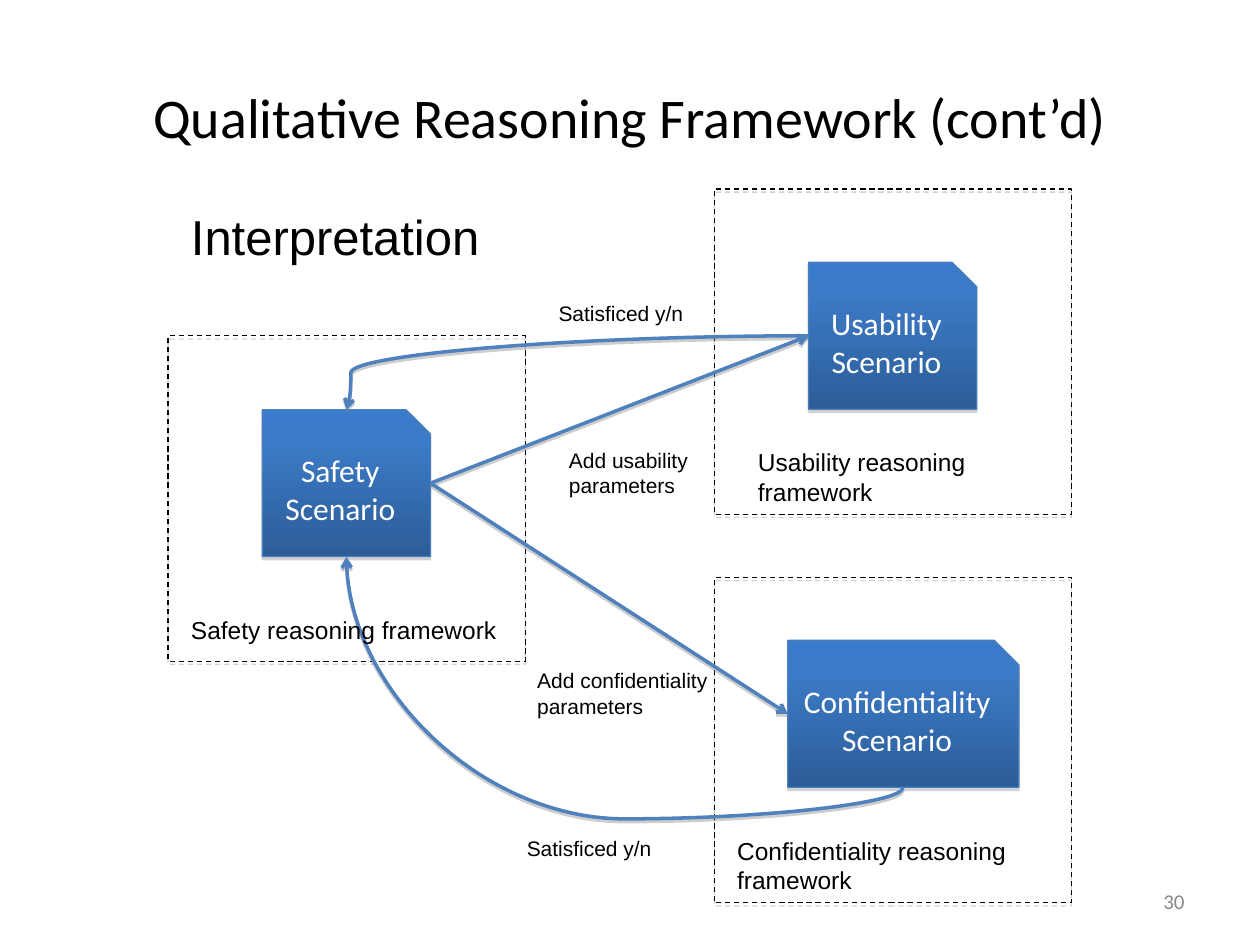
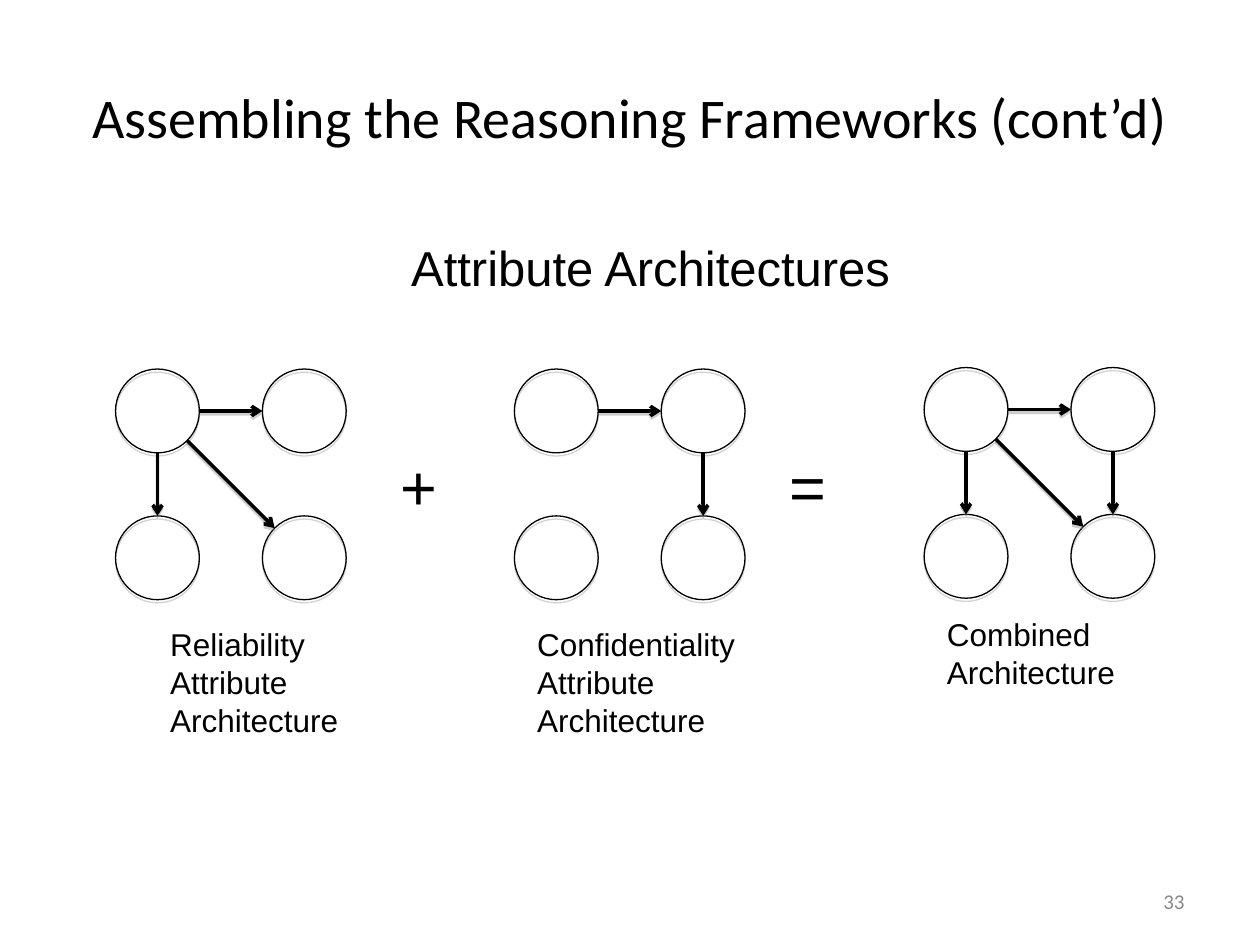
from copy import deepcopy
from dataclasses import dataclass
from math import hypot

from lxml.etree import SubElement
from pptx import Presentation
from pptx.dml.color import RGBColor
from pptx.enum.dml import MSO_LINE
from pptx.enum.shapes import MSO_CONNECTOR, MSO_SHAPE
from pptx.enum.text import MSO_ANCHOR, PP_ALIGN
from pptx.oxml.ns import qn
from pptx.util import Cm, Pt


@dataclass(frozen=True)
class Theme:
    heading_font: str = "Calibri"
    text_font: str = "Arial"
    black: str = "000000"
    white: str = "FFFFFF"
    grey: str = "898989"
    shadow: str = "808080"
    arrow: str = "4F81BD"
    box_line: str = "4A7EBB"
    gradient: tuple = ((0, "3A7CCB"), (0.2, "3C7BC7"), (1, "2C5D98"))
    title: int = 32
    subtitle: int = 28
    sign: int = 36
    box: int = 18
    frame: int = 14
    small: int = 12
    thin: float = 0.75
    thick: float = 2


T = Theme()


def write(shape, lines, size, font=T.text_font, color=T.black,
          align=PP_ALIGN.LEFT, anchor=MSO_ANCHOR.TOP):
    tf = shape.text_frame
    tf.word_wrap = True
    tf.vertical_anchor = anchor
    for i, line in enumerate(lines):
        p = tf.add_paragraph() if i else tf.paragraphs[0]
        p.alignment = align
        r = p.add_run()
        r.text = line
        r.font.size = Pt(size)
        r.font.name = font
        r.font.color.rgb = RGBColor.from_string(color)


def outline(shape, color, width, arrow=False):
    """Line, soft drop shadow and, on request, an arrowhead at the end."""
    shape.line.color.rgb = RGBColor.from_string(color)
    shape.line.width = Pt(width)
    sp_pr = shape.element.spPr
    if arrow:
        SubElement(sp_pr.find(qn("a:ln")), qn("a:tailEnd"), type="arrow")
    effects = SubElement(sp_pr, qn("a:effectLst"))
    shadow = SubElement(effects, qn("a:outerShdw"), blurRad="0",
                        dist=str(Pt(1.6 if arrow else 1.8)), dir="5400000",
                        rotWithShape="0")
    clr = SubElement(shadow, qn("a:srgbClr"), val=T.shadow)
    SubElement(clr, qn("a:alpha"), val="38000" if arrow else "35000")


prs = Presentation()
prs.slide_width, prs.slide_height = Cm(25.4), Cm(19.05)

# Titles and page numbers
slides = []
for title, number in (
    ("Qualitative Reasoning Framework (cont’d)", "30"),
    ("Assembling the Reasoning Frameworks (cont’d)", "33"),
):
    s = prs.slides.add_slide(prs.slide_layouts[5])
    sp = s.shapes.title
    sp.left, sp.top, sp.width, sp.height = Cm(1.27), Cm(0.76), Cm(22.86), Cm(3.18)
    write(sp, [title], T.title, T.heading_font, align=PP_ALIGN.CENTER,
          anchor=MSO_ANCHOR.MIDDLE)
    sp = s.shapes.add_textbox(Cm(18.21), Cm(17.65), Cm(5.92), Cm(1.02))
    write(sp, [number], T.small, T.heading_font, T.grey, PP_ALIGN.RIGHT,
          MSO_ANCHOR.MIDDLE)
    slides.append(s)

# Slide 1: dashed frameworks, each with its scenario
s = slides[0]
for name, frame_x, frame_y, box_x, box_y, box_w in (
    ("Safety", 3.39, 6.77, 5.29, 8.26, 3.39),
    ("Usability", 14.4, 3.81, 16.3, 5.29, 3.39),
    ("Confidentiality", 14.4, 11.64, 15.88, 12.91, 4.66),
):
    sp = s.shapes.add_shape(MSO_SHAPE.RECTANGLE, Cm(frame_x), Cm(frame_y),
                            Cm(7.2), Cm(6.56))
    sp.fill.background()
    outline(sp, T.black, T.thin)
    sp.line.dash_style = MSO_LINE.DASH

    sp = s.shapes.add_shape(MSO_SHAPE.SNIP_1_RECTANGLE, Cm(box_x), Cm(box_y),
                            Cm(box_w), Cm(2.96))
    sp.fill.gradient()
    sp.fill.gradient_angle = 270
    stops = sp.element.spPr.find(".//" + qn("a:gsLst"))
    stops.insert(1, deepcopy(stops[0]))
    for stop, (position, color) in zip(sp.fill.gradient_stops, T.gradient):
        stop.position = position
        stop.color.rgb = RGBColor.from_string(color)
    outline(sp, T.box_line, T.thin)
    write(sp, [name, "Scenario"], T.box, T.heading_font, T.white,
          PP_ALIGN.CENTER, MSO_ANCHOR.MIDDLE)

# Slide 1: arrows, the curved ones with a bend and a rotation
for kind, x1, y1, x2, y2, bend, rotation in (
    (MSO_CONNECTOR.CURVE, 16.3, 6.77, 6.99, 8.26, 99100, 0),
    (MSO_CONNECTOR.STRAIGHT, 8.68, 9.74, 16.3, 6.77, None, 0),
    (MSO_CONNECTOR.STRAIGHT, 8.68, 9.74, 15.88, 14.39, None, 0),
    (MSO_CONNECTOR.CURVE, 14.92, 7.94, 10.27, 19.16, -13600, 90),
):
    arrow = s.shapes.add_connector(kind, Cm(x1), Cm(y1), Cm(x2), Cm(y2))
    outline(arrow, T.arrow, T.thick, arrow=True)
    if bend is not None:
        sp_pr = arrow.element.spPr
        SubElement(sp_pr.find(".//" + qn("a:avLst")), qn("a:gd"), name="adj1",
                   fmla=f"val {bend}")
        sp_pr.find(qn("a:xfrm")).set("rot", str(rotation * 60000))

# Slide 2: attribute architectures, nodes as (column, row)
s = slides[1]
DIAMETER, STEP = 1.69, 2.96
across = ((0, 0), (1, 0))
left_down = ((0, 0), (0, 1))
right_down = ((1, 0), (1, 1))
diagonal = ((0, 0), (1, 1))
for left, top, links in (
    (2.33, 7.44, (across, left_down, diagonal)),
    (10.37, 7.44, (across, right_down)),
    (18.63, 7.41, (across, left_down, right_down, diagonal)),
):
    for col, row in ((0, 0), (1, 0), (1, 1), (0, 1)):
        sp = s.shapes.add_shape(MSO_SHAPE.OVAL, Cm(left + col * STEP),
                                Cm(top + row * STEP), Cm(DIAMETER), Cm(DIAMETER))
        sp.fill.background()
        outline(sp, T.black, T.thin)
    # Arrows run from rim to rim along the line between the centres
    for (c1, r1), (c2, r2) in links:
        length = hypot(c2 - c1, r2 - r1)
        dx, dy = ((c2 - c1) / length * DIAMETER / 2,
                  (r2 - r1) / length * DIAMETER / 2)
        cx, cy = left + DIAMETER / 2, top + DIAMETER / 2
        arrow = s.shapes.add_connector(
            MSO_CONNECTOR.STRAIGHT,
            Cm(cx + c1 * STEP + dx), Cm(cy + r1 * STEP + dy),
            Cm(cx + c2 * STEP - dx), Cm(cy + r2 * STEP - dy))
        outline(arrow, T.black, T.thick, arrow=True)

# Labels on both slides
for s, labels in zip(slides, (
    (
        ("Interpretation", T.subtitle, 3.6, 4.04, 6.56, 1.45),
        ("Safety reasoning framework", T.frame, 3.6, 12.28, 6.99, 0.86),
        ("Usability reasoning framework", T.frame, 15.03, 8.89, 6.99, 1.45),
        ("Confidentiality reasoning framework", T.frame, 14.61, 16.72, 6.99, 1.45),
        ("Satisficed y/n", T.small, 11.01, 5.93, 3.18, 0.77),
        ("Satisficed y/n", T.small, 10.37, 16.72, 3.18, 0.77),
        ("Add usability parameters", T.small, 11.22, 8.89, 3.18, 1.3),
        ("Add confidentiality parameters", T.small, 10.58, 13.34, 4.23, 1.3),
    ),
    (
        ("Attribute Architectures", T.subtitle, 8.04, 4.66, 10.58, 1.45),
        ("Reliability Attribute Architecture", T.box, 3.18, 12.48, 5.5, 2.57),
        ("Confidentiality Attribute Architecture", T.box, 10.58, 12.48, 4.87, 2.57),
        ("Combined Architecture", T.box, 18.84, 12.28, 4.87, 1.8),
        ("+", T.sign, 7.83, 8.89, 1.69, 1.8),
        ("=", T.sign, 15.66, 8.89, 1.69, 1.8),
    ),
)):
    for text, size, x, y, w, h in labels:
        write(s.shapes.add_textbox(Cm(x), Cm(y), Cm(w), Cm(h)), [text], size)

prs.save("out.pptx")
